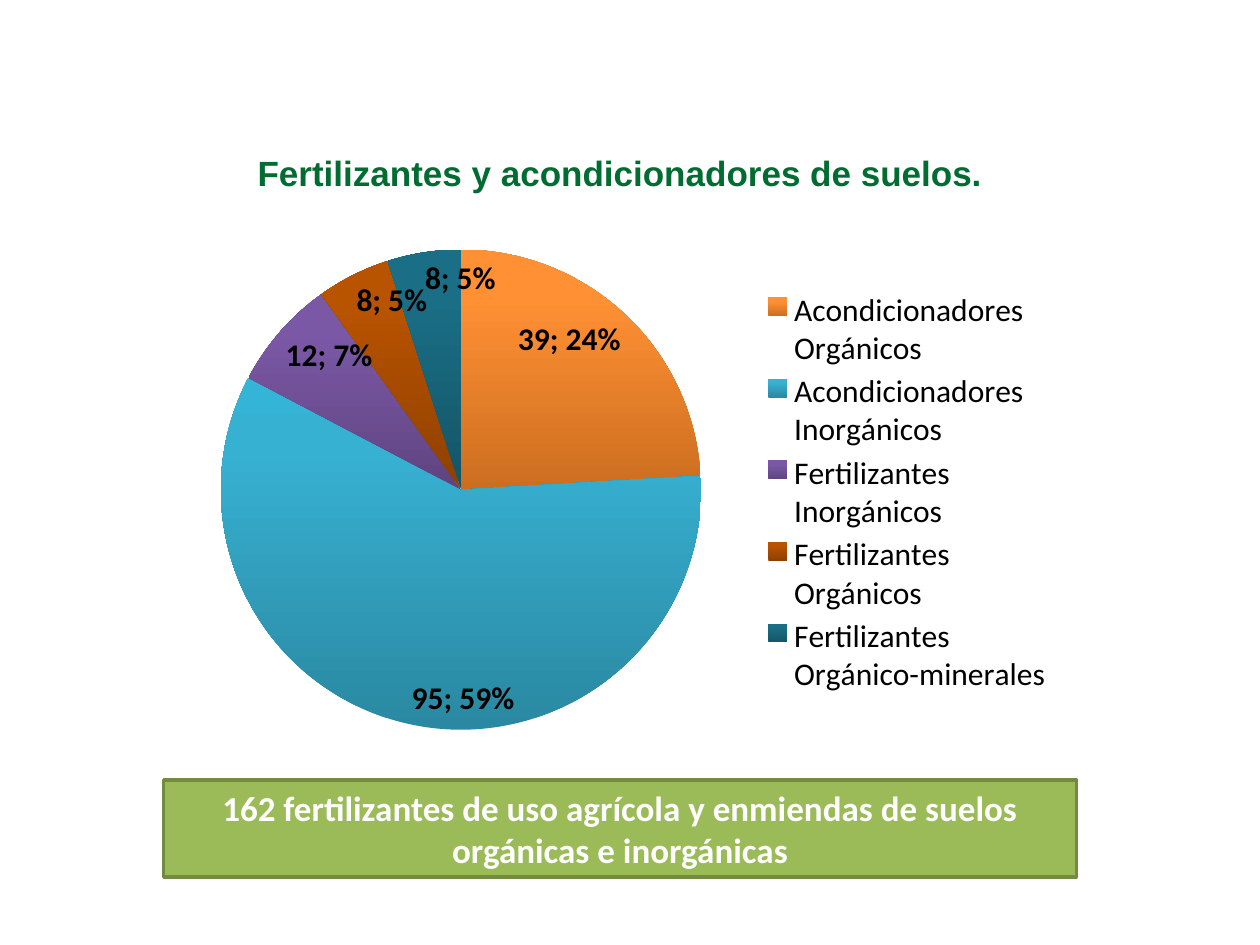
from copy import deepcopy

from pptx import Presentation
from pptx.chart.data import CategoryChartData
from pptx.dml.color import RGBColor
from pptx.enum.chart import XL_CHART_TYPE, XL_LABEL_POSITION, XL_LEGEND_POSITION
from pptx.enum.shapes import MSO_SHAPE
from pptx.enum.text import MSO_ANCHOR, PP_ALIGN
from pptx.oxml import parse_xml
from pptx.oxml.ns import nsdecls
from pptx.util import Cm, Pt

WHITE = RGBColor(0xFF, 0xFF, 0xFF)
BLACK = RGBColor(0x00, 0x00, 0x00)
TITLE_GREEN = RGBColor(0x00, 0x6C, 0x31)
BANNER_GREEN = RGBColor(0x9B, 0xBB, 0x59)
BANNER_EDGE = RGBColor(0x73, 0x8A, 0x42)

STOP_POSITIONS = (0, 0.8, 1)
# Category, number of products, gradient colours from bottom to top
SLICES = [
    ("Acondicionadores Orgánicos", 39,
     (RGBColor(0xCC, 0x6E, 0x20), RGBColor(0xFF, 0x90, 0x34), RGBColor(0xFF, 0x91, 0x36))),
    ("Acondicionadores Inorgánicos", 95,
     (RGBColor(0x2A, 0x88, 0xA2), RGBColor(0x37, 0xB1, 0xD2), RGBColor(0x34, 0xB4, 0xD6))),
    ("Fertilizantes Inorgánicos", 12,
     (RGBColor(0x5F, 0x44, 0x80), RGBColor(0x7B, 0x58, 0xA6), RGBColor(0x7C, 0x57, 0xA8))),
    ("Fertilizantes Orgánicos", 8,
     (RGBColor(0x8E, 0x40, 0x00), RGBColor(0xB8, 0x53, 0x00), RGBColor(0xB9, 0x54, 0x00))),
    ("Fertilizantes Orgánico-minerales", 8,
     (RGBColor(0x14, 0x55, 0x66), RGBColor(0x1A, 0x6E, 0x85), RGBColor(0x18, 0x70, 0x88))),
]


def set_font(font, name, size, color, bold=False):
    font.name = name
    font.size = Pt(size)
    font.bold = bold
    font.color.rgb = color


def write_centred(shape, text, font_name, color):
    tf = shape.text_frame
    tf.word_wrap = True
    tf.vertical_anchor = MSO_ANCHOR.MIDDLE
    tf.text = text
    p = tf.paragraphs[0]
    p.alignment = PP_ALIGN.CENTER
    set_font(p.runs[0].font, font_name, 20, color, bold=True)


def add_title(slide, left, top, width, height):
    box = slide.shapes.add_textbox(left, top, width, height)
    write_centred(box, "Fertilizantes y acondicionadores de suelos.", "Arial", TITLE_GREEN)


def add_banner(slide, left, top, width, height):
    sp = slide.shapes.add_shape(MSO_SHAPE.RECTANGLE, left, top, width, height)
    sp.shadow.inherit = False
    sp.fill.solid()
    sp.fill.fore_color.rgb = BANNER_GREEN
    sp.line.color.rgb = BANNER_EDGE
    sp.line.width = Pt(2)
    write_centred(
        sp,
        "162 fertilizantes de uso agrícola y enmiendas de suelos orgánicas e inorgánicas",
        "Calibri", WHITE)


def fill_gradient(fill, colors):
    fill.gradient()
    fill.gradient_angle = 90
    last = fill.gradient_stops[1]._gs
    last.addnext(deepcopy(last))
    for stop, position, color in zip(fill.gradient_stops, STOP_POSITIONS, colors):
        stop.position = position
        stop.color.rgb = color


def manual_layout(x, y, w, h, inner=False):
    """Return a c:layout element; lengths are fractions of the chart."""
    target = '<c:layoutTarget val="inner"/>' if inner else ""
    return parse_xml(
        f'<c:layout {nsdecls("c")}><c:manualLayout>{target}'
        '<c:xMode val="edge"/><c:yMode val="edge"/>'
        f'<c:x val="{x}"/><c:y val="{y}"/><c:w val="{w}"/><c:h val="{h}"/>'
        '</c:manualLayout></c:layout>')


def add_pie(slide, left, top, width, height):
    data = CategoryChartData()
    data.categories = [name for name, _, _ in SLICES]
    data.add_series("Series 1", [count for _, count, _ in SLICES])
    chart = slide.shapes.add_chart(
        XL_CHART_TYPE.PIE, left, top, width, height, data).chart
    chart.has_title = False
    set_font(chart.font, "Calibri", 18, BLACK)

    series = chart.plots[0].series[0]
    for i, (_, _, colors) in enumerate(SLICES):
        fill_gradient(series.points[i].format.fill, colors)

    labels = series.data_labels
    labels.show_value = True
    labels.show_percentage = True
    labels.position = XL_LABEL_POSITION.INSIDE_END
    set_font(labels.font, "Calibri", 18, BLACK, bold=True)
    separator = parse_xml(f'<c:separator {nsdecls("c")}>; </c:separator>')
    labels._element.find("{*}showBubbleSize").addnext(separator)

    chart.has_legend = True
    legend = chart.legend
    legend.position = XL_LEGEND_POSITION.RIGHT
    legend.include_in_layout = False
    set_font(legend.font, "Calibri", 18, BLACK)

    for old in legend._element.findall("{*}layout"):
        legend._element.remove(old)
    legend._element.find("{*}legendPos").addnext(manual_layout(0.66, 0.1, 0.33, 0.8))
    plot_area = chart._chartSpace.chart.plotArea
    for old in plot_area.findall("{*}layout"):
        plot_area.remove(old)
    plot_area.insert(0, manual_layout(0.06, 0.03, 0.54, 0.93, inner=True))


def main():
    prs = Presentation()
    prs.slide_width = Cm(25.4)
    prs.slide_height = Cm(19.05)
    slide = prs.slides.add_slide(prs.slide_layouts[6])
    add_banner(slide, Cm(3.3), Cm(15.72), Cm(18.4), Cm(1.96))
    add_pie(slide, Cm(3.3), Cm(4.72), Cm(18.16), Cm(10.41))
    add_title(slide, Cm(1.55), Cm(2.92), Cm(21.9), Cm(1.12))
    prs.save("out.pptx")


if __name__ == "__main__":
    main()
